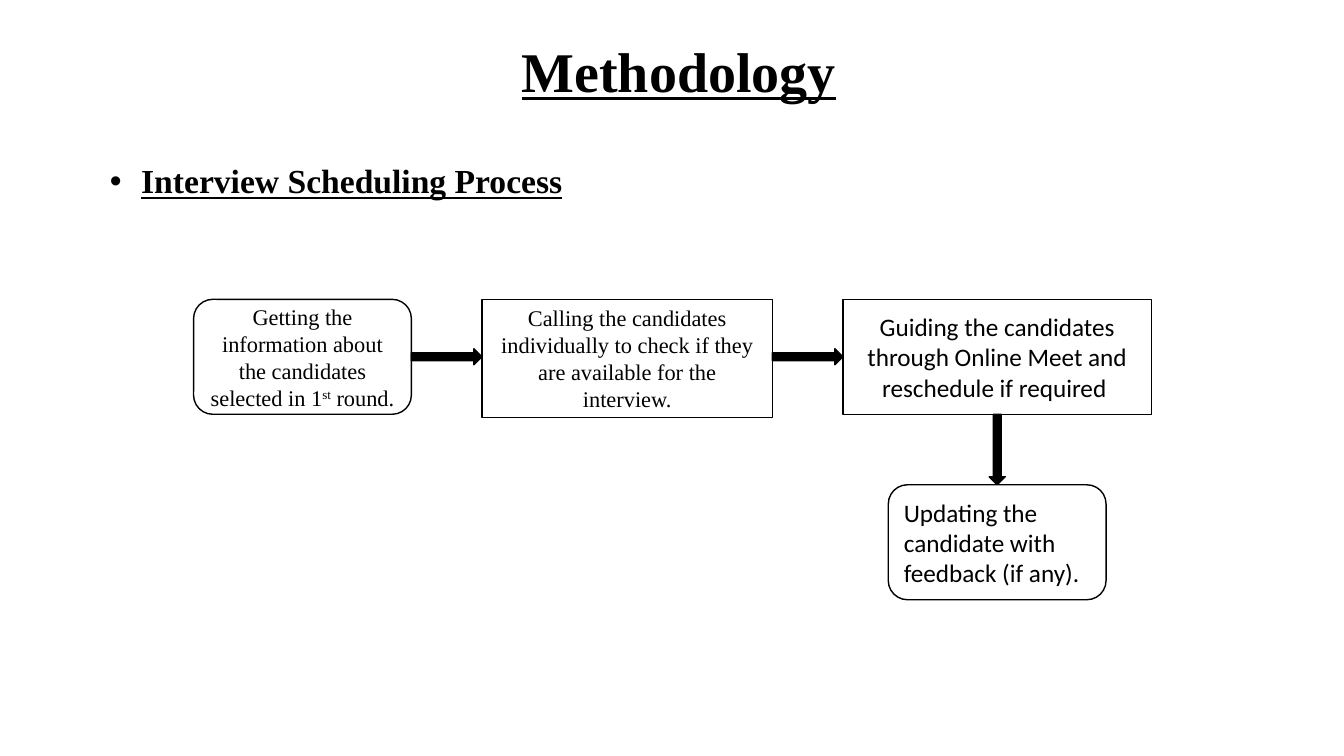
from pptx import Presentation
from pptx.dml.color import RGBColor
from pptx.enum.shapes import MSO_SHAPE as Preset
from pptx.enum.text import MSO_ANCHOR as Anchor, MSO_AUTO_SIZE as AutoSize, PP_ALIGN as Align
from pptx.oxml.ns import qn
from pptx.util import Inches, Pt
from lxml.etree import SubElement

BLACK = RGBColor(0, 0, 0)
WHITE = RGBColor(255, 255, 255)
SERIF = "Times New Roman"
SANS = "Calibri"

COLUMN = Inches(0.18)
ROW = Inches(0.1)
FLOW_LEFT, FLOW_TOP = 10.67, 29.7
STEP_HEIGHT = 11.4
GAP = Inches(0.7)
ARROW_THICKNESS = Inches(0.16)


def columns(count):
    return round(count * COLUMN)


def rows(count):
    return round(count * ROW)


def style_runs(paragraph, face, size, strong=False):
    for run in paragraph.runs:
        run.font.name = face
        run.font.size = Pt(size)
        run.font.bold = run.font.underline = strong
        run.font.color.rgb = BLACK


def place_heading(holder, words, box, size, align):
    holder.left, holder.top, holder.width, holder.height = box
    frame = holder.text_frame
    frame.text = words
    frame.auto_size = AutoSize.NONE
    frame.vertical_anchor = Anchor.MIDDLE
    paragraph = frame.paragraphs[0]
    paragraph.alignment = align
    paragraph.space_before = Pt(0)
    style_runs(paragraph, SERIF, size, strong=True)
    return paragraph


def add_bullet(paragraph, indent):
    properties = paragraph._p.get_or_add_pPr()
    properties.set("marL", str(indent))
    properties.set("indent", str(-indent))
    SubElement(properties, qn("a:buFont")).set("typeface", "Arial")
    SubElement(properties, qn("a:buChar")).set("char", "•")


def add_outlined(slide, preset, box, fill):
    shape = slide.shapes.add_shape(preset, *box)
    shape.shadow.inherit = False
    shape.fill.solid()
    shape.fill.fore_color.rgb = fill
    shape.line.color.rgb = BLACK
    shape.line.width = Pt(1)
    return shape


def add_step(slide, preset, box, pieces, face, size, align=Align.CENTER):
    step = add_outlined(slide, preset, box, WHITE)
    frame = step.text_frame
    frame.word_wrap = True
    frame.vertical_anchor = Anchor.MIDDLE
    paragraph = frame.paragraphs[0]
    paragraph.alignment = align
    for index, piece in enumerate(pieces):
        run = paragraph.add_run()
        run.text = piece
        if index % 2:
            run._r.get_or_add_rPr().set("baseline", "30000")
    style_runs(paragraph, face, size)
    return step


def add_arrow(slide, center_x, center_y, rotation=0):
    box = (center_x - GAP // 2, center_y - ARROW_THICKNESS // 2, GAP, ARROW_THICKNESS)
    add_outlined(slide, Preset.RIGHT_ARROW, box, BLACK).rotation = rotation


def main():
    deck = Presentation()
    deck.slide_width, deck.slide_height = Inches(13.33), Inches(7.5)
    slide = deck.slides.add_slide(deck.slide_layouts[1])
    title, process = slide.placeholders

    place_heading(title, "Methodology",
                  (columns(23.7), rows(3.1), columns(27.4), rows(7.7)), 40, Align.CENTER)
    process_line = place_heading(process, "Interview Scheduling Process",
                                 (columns(5.5), rows(15.4), columns(31.7), rows(5)),
                                 24, Align.LEFT)
    add_bullet(process_line, Inches(0.31))

    terminal, activity = Preset.FLOWCHART_ALTERNATE_PROCESS, Preset.FLOWCHART_PROCESS
    steps = [
        (terminal, 12, STEP_HEIGHT, SERIF, 16,
         ["Getting the information about the candidates selected in 1", "st", " round."]),
        (activity, 16, 11.7, SERIF, 16,
         ["Calling the candidates individually to check if they are available for the interview."]),
        (activity, 17, STEP_HEIGHT, SANS, 18,
         ["Guiding the candidates through Online Meet and reschedule if required "]),
    ]
    left, top = columns(FLOW_LEFT), rows(FLOW_TOP)
    for number, (preset, width, height, face, size, pieces) in enumerate(steps):
        if number:
            add_arrow(slide, left - GAP // 2, top + rows(STEP_HEIGHT) // 2)
        guiding = add_step(slide, preset, (left, top, columns(width), rows(height)),
                           pieces, face, size)
        left += columns(width) + GAP

    middle = guiding.left + guiding.width // 2
    bottom = guiding.top + guiding.height
    add_arrow(slide, middle, bottom + GAP // 2, rotation=90)
    add_step(slide, terminal,
             (middle - columns(6), bottom + GAP, columns(12), rows(STEP_HEIGHT)),
             ["Updating the candidate with feedback (if any)."], SANS, 18, Align.LEFT)

    deck.save("out.pptx")


if __name__ == "__main__":
    main()
